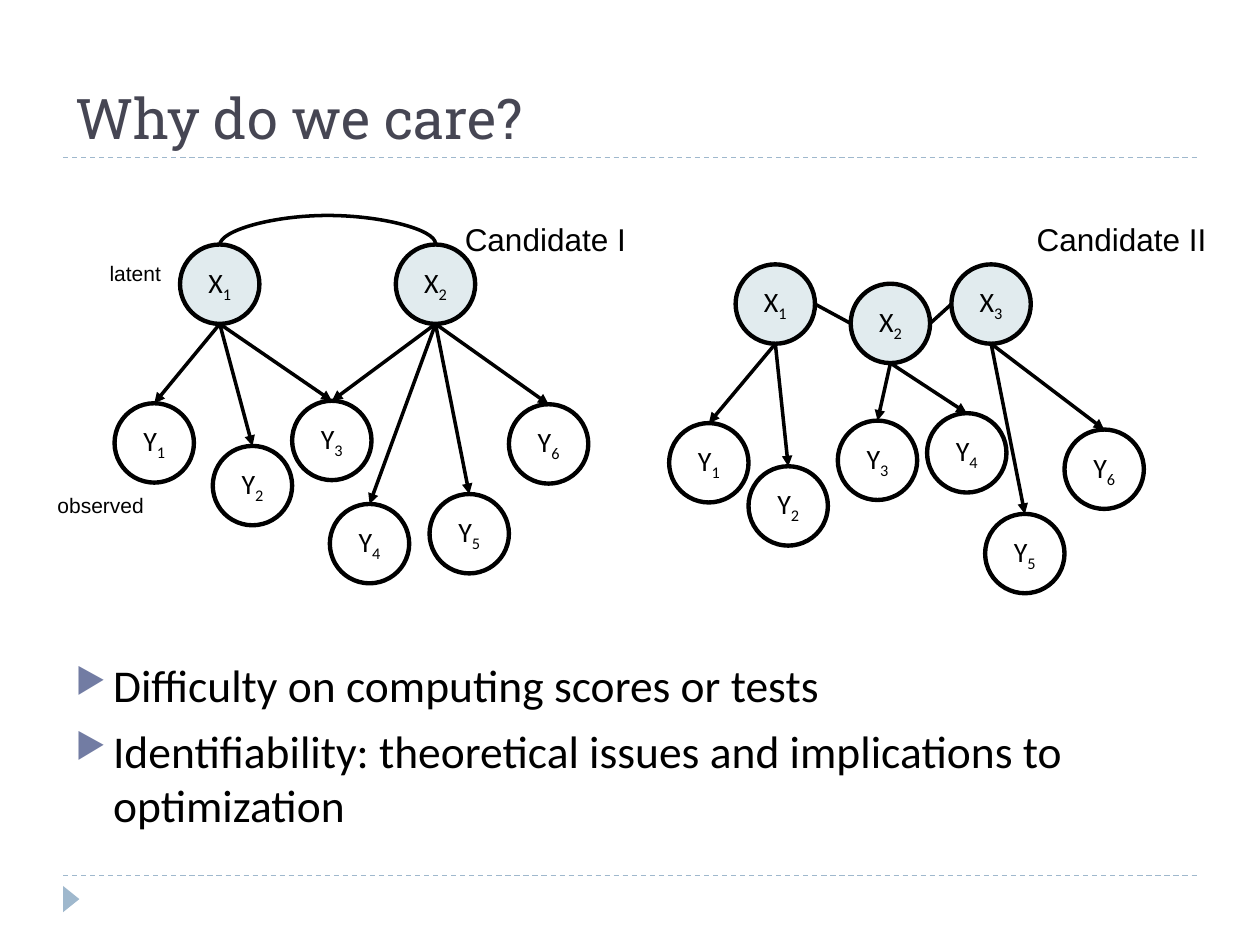
from lxml import etree
from pptx import Presentation
from pptx.dml.color import RGBColor
from pptx.enum.dml import MSO_LINE
from pptx.enum.shapes import MSO_CONNECTOR, MSO_SHAPE
from pptx.enum.text import MSO_ANCHOR, MSO_AUTO_SIZE, PP_ALIGN
from pptx.oxml.ns import qn
from pptx.util import Cm, Pt

STRAIGHT, CURVE = MSO_CONNECTOR.STRAIGHT, MSO_CONNECTOR.CURVE
OVAL, TRIANGLE = MSO_SHAPE.OVAL, MSO_SHAPE.ISOSCELES_TRIANGLE
DASH = MSO_LINE.DASH
BOTTOM, MIDDLE = MSO_ANCHOR.BOTTOM, MSO_ANCHOR.MIDDLE
NO_FIT, GROW = MSO_AUTO_SIZE.NONE, MSO_AUTO_SIZE.SHAPE_TO_FIT_TEXT
LEFT, CENTER = PP_ALIGN.LEFT, PP_ALIGN.CENTER

BLACK = RGBColor(0x00, 0x00, 0x00)
WHITE = RGBColor(0xFF, 0xFF, 0xFF)
SLATE = RGBColor(0x46, 0x46, 0x53)
PALE = RGBColor(0xDD, 0xE9, 0xEC)
SKY = RGBColor(0x9F, 0xB8, 0xCD)
BULLET = RGBColor(0x72, 0x7C, 0xA3)

TITLE = "Why do we care?"
BULLETS = [
    "Difficulty on computing scores or tests",
    "Identifiability: theoretical issues and implications to optimization",
]
LABELS = [
    ("latent", 12, 1.96, 5.13, 1.55, 0.76),
    ("observed", 12, 0.91, 9.8, 2.26, 0.76),
    ("Candidate I", 18, 9.12, 4.32, 3.78, 1.02),
    ("Candidate II", 18, 20.65, 4.32, 3.96, 1.02),
]
CANDIDATES = [
    {
        "nodes": {
            "X1": (3.63, 4.93), "X2": (7.98, 4.93),
            "Y1": (2.31, 8.13), "Y2": (4.29, 8.99), "Y3": (5.89, 8.08),
            "Y4": (6.65, 10.16), "Y5": (8.66, 9.96), "Y6": (10.26, 8.15),
        },
        "arrows": {"X1": ["Y1", "Y2", "Y3"], "X2": ["Y3", "Y4", "Y5", "Y6"]},
        "links": [],
        "arcs": [("X1", "X2")],
    },
    {
        "nodes": {
            "X1": (14.83, 5.33), "X2": (17.15, 5.72), "X3": (19.18, 5.33),
            "Y1": (13.49, 8.53), "Y2": (15.09, 9.4), "Y3": (16.89, 8.48),
            "Y4": (18.69, 8.33), "Y5": (19.86, 10.36), "Y6": (21.46, 8.66),
        },
        "arrows": {"X1": ["Y1", "Y2"], "X2": ["Y3", "Y4"], "X3": ["Y5", "Y6"]},
        "links": [("X1", "X2"), ("X2", "X3")],
        "arcs": [],
    },
]
NODE = 1.6
ARC_RISE = 0.6
ARC_DEPTH = 0.03
RULE_LEFT, RULE_RIGHT, RULES = 1.27, 24.13, (3.18, 17.65)
OPACITY = {"X": 87, "Y": 90}
FILL = {"X": PALE, "Y": WHITE}


def apply(target, formats):
    for name, value in formats.items():
        setattr(target, name, value)


def add_run(p, text, size, font, color=BLACK):
    r = p.add_run()
    r.text = text
    apply(r.font, {"size": Pt(size), "name": font})
    r.font.color.rgb = color
    return r


def add_line(s, start, end, color=BLACK, width=2, kind=STRAIGHT, arrow=False):
    c = s.shapes.add_connector(kind, *(Cm(v) for v in (*start, *end)))
    c.line.color.rgb = color
    c.line.width = Pt(width)
    if arrow:
        etree.SubElement(c.line._get_or_add_ln(), qn("a:tailEnd"), type="triangle")
    etree.SubElement(c._element.spPr, qn("a:effectLst"))
    return c


def add_arc(s, start, end):
    x, y = (start[0] + end[0]) / 2, (start[1] + end[1]) / 2
    half_depth, half_span = ARC_DEPTH / 2, (end[0] - start[0]) / 2
    c = add_line(s, (x + half_depth, y + half_span),
                 (x - half_depth, y - half_span), kind=CURVE)
    spPr = c._element.spPr
    spPr.find(qn("a:xfrm")).set("rot", "5400000")
    guides = spPr.find(qn("a:prstGeom")).find(qn("a:avLst"))
    bend = round(ARC_RISE / ARC_DEPTH * 100000)
    etree.SubElement(guides, qn("a:gd"), name="adj1", fmla=f"val {bend}")


def add_node(s, name, x, y):
    letter, index = name
    sp = s.shapes.add_shape(OVAL, Cm(x), Cm(y), Cm(NODE), Cm(NODE))
    sp.shadow.inherit = False
    sp.fill.solid()
    sp.fill.fore_color.rgb = FILL[letter]
    color = sp._element.spPr.find(qn("a:solidFill"))[0]
    etree.SubElement(color, qn("a:alpha"), val=str(OPACITY[letter] * 1000))
    sp.line.color.rgb = BLACK
    sp.line.width = Pt(2.5)
    tf = sp.text_frame
    apply(tf, {"vertical_anchor": MIDDLE, "margin_left": 0, "margin_right": 0})
    p = tf.paragraphs[0]
    p.alignment = CENTER
    add_run(p, letter, 16, "Calibri")
    r = add_run(p, index, 16, "Calibri")
    r.font._element.set("baseline", "-25000")


def add_candidate(s, nodes, arrows, links, arcs):
    def at(name, dx, dy):
        x, y = nodes[name]
        return x + dx * NODE, y + dy * NODE

    for name, (x, y) in nodes.items():
        add_node(s, name, x, y)
    for parent, children in arrows.items():
        for child in children:
            add_line(s, at(parent, 0.5, 1), at(child, 0.5, 0), arrow=True)
    for a, b in links:
        add_line(s, at(a, 1, 0.5), at(b, 0, 0.5))
    for a, b in arcs:
        add_arc(s, at(a, 0.5, 0), at(b, 0.5, 0))


def add_bullets(s):
    tf = s.shapes.add_textbox(Cm(1.27), Cm(13.13), Cm(22.86), Cm(3.99)).text_frame
    tf.word_wrap = True
    for i, text in enumerate(BULLETS):
        p = tf.paragraphs[0] if i == 0 else tf.add_paragraph()
        p.space_before = Pt(6)
        pPr = p._p.get_or_add_pPr()
        indent = Cm(0.76)
        pPr.set("marL", str(indent))
        pPr.set("indent", str(-indent))
        color = etree.SubElement(pPr, qn("a:buClr"))
        etree.SubElement(color, qn("a:srgbClr"), val=str(BULLET))
        etree.SubElement(pPr, qn("a:buSzPct"), val="76000")
        etree.SubElement(pPr, qn("a:buChar"), char="▶")
        add_run(p, text, 26, "Calibri")


def main():
    prs = Presentation()
    prs.slide_width, prs.slide_height = Cm(25.4), Cm(19.05)
    s = prs.slides.add_slide(prs.slide_layouts[5])

    for y in RULES:
        c = add_line(s, (RULE_LEFT, y), (RULE_RIGHT, y), SKY, 0.75)
        c.line.dash_style = DASH
    sp = s.shapes.add_shape(TRIANGLE, Cm(1.17), Cm(17.96), Cm(0.53), Cm(0.33))
    sp.rotation = 90
    sp.shadow.inherit = False
    sp.fill.solid()
    sp.fill.fore_color.rgb = SKY
    sp.line.fill.background()

    title = s.shapes.title
    apply(title, {"left": Cm(1.27), "top": Cm(0.43),
                  "width": Cm(22.86), "height": Cm(2.74)})
    apply(title.text_frame, {"vertical_anchor": BOTTOM, "auto_size": NO_FIT})
    p = title.text_frame.paragraphs[0]
    p.alignment = LEFT
    add_run(p, TITLE, 32, "Roboto Slab", SLATE)

    add_bullets(s)
    for candidate in CANDIDATES:
        add_candidate(s, **candidate)
    for text, size, *box in LABELS:
        tf = s.shapes.add_textbox(*(Cm(v) for v in box)).text_frame
        apply(tf, {"word_wrap": False, "auto_size": GROW})
        add_run(tf.paragraphs[0], text, size, "Arial")

    prs.save("out.pptx")


if __name__ == "__main__":
    main()
